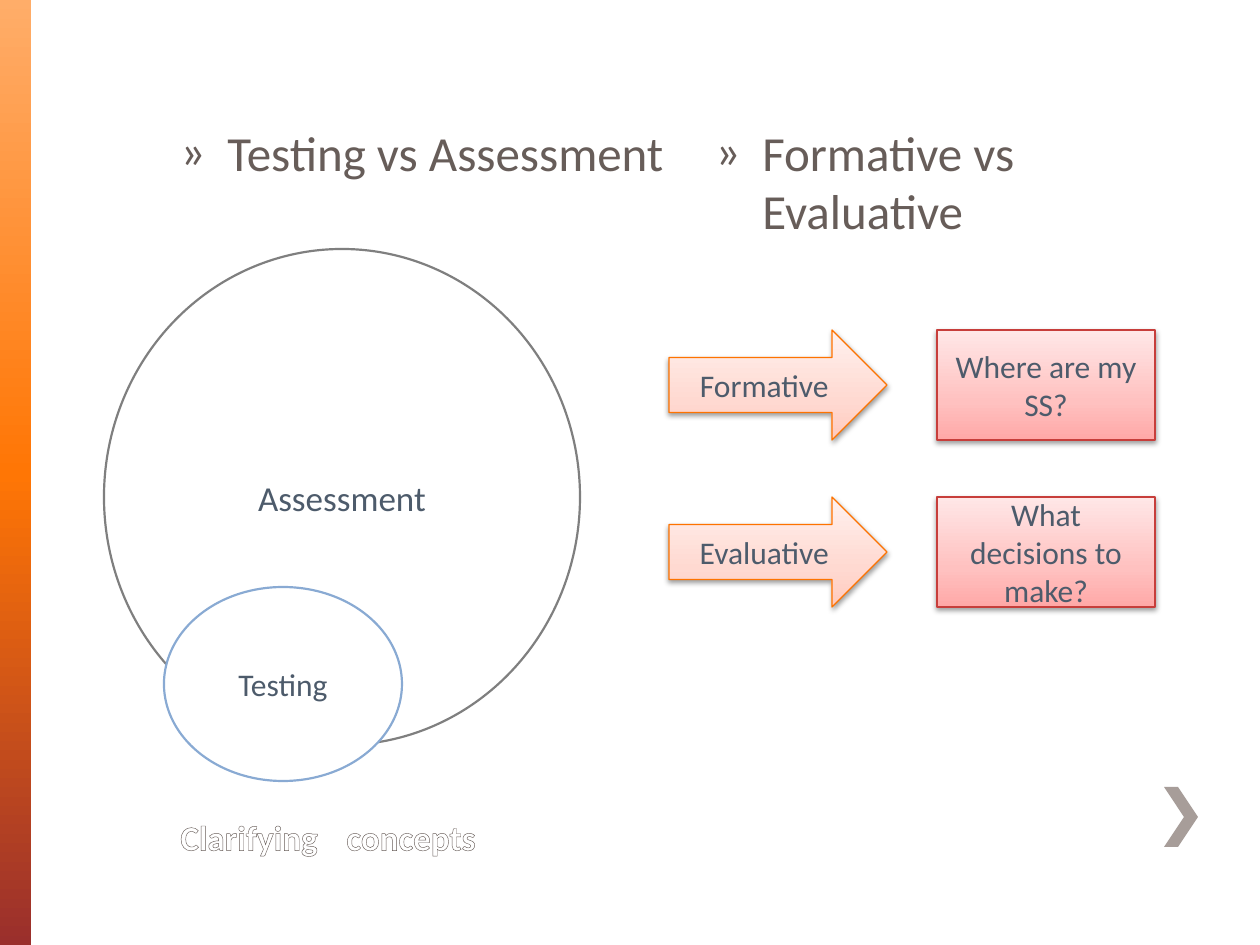
from lxml import etree
from pptx import Presentation
from pptx import util as u
from pptx.dml.color import RGBColor
from pptx.enum import shapes, text
from pptx.oxml import parse_xml
from pptx.oxml.ns import qn

NS = "http://schemas.openxmlformats.org/drawingml/2006/main"
SCALE = 914400 / 126
FONT = "Calibri"
WHITE = RGBColor(0xFF, 0xFF, 0xFF)
BROWN = RGBColor(0x67, 0x5D, 0x59)
SLATE = RGBColor(0x4D, 0x5B, 0x6B)
GRAY = RGBColor(0x7F, 0x7F, 0x7F)
BLUE = RGBColor(0x89, 0xAA, 0xD3)
ORANGE = RGBColor(0xFE, 0x73, 0x00)
RED = RGBColor(0xC7, 0x3E, 0x3B)
TAUPE = RGBColor(0xA7, 0x9D, 0x99)

# Gradients: position in percent and colour
FLAME = [(0, RGBColor(0xFF, 0xAD, 0x69)), (50, RGBColor(0xFF, 0x76, 0x05)),
         (100, RGBColor(0x9A, 0x2F, 0x2C))]
PEACH = [(0, RGBColor(0xFF, 0xCA, 0xBD)), (35, RGBColor(0xFF, 0xD9, 0xD1)),
         (100, RGBColor(0xFF, 0xF1, 0xEE))]
PINK = [(0, RGBColor(0xFF, 0xA8, 0xA7)), (35, RGBColor(0xFF, 0xC1, 0xC0)),
        (100, RGBColor(0xFF, 0xE7, 0xE7))]


def emu(px):
    return u.Emu(round(px * SCALE))


class Deck:
    def __init__(self):
        self.prs = Presentation()
        self.prs.slide_width, self.prs.slide_height = emu(1260), emu(945)
        self.page = self.prs.slides.add_slide(self.prs.slide_layouts[6])

    def style(self, run, size, color, bold=None):
        font = run.font
        font.name, font.size, font.bold = FONT, u.Pt(size), bold
        font.color.rgb = color

    def blend(self, shape, stops, angle):
        marks = "".join(f'<a:gs pos="{pos * 1000}"><a:srgbClr val="{color}"/></a:gs>'
                        for pos, color in stops)
        grad = parse_xml(f'<a:gradFill xmlns:a="{NS}" rotWithShape="1"><a:gsLst>{marks}'
                         f'</a:gsLst><a:lin ang="{angle * 60000}" scaled="0"/></a:gradFill>')
        shape.fill.background()
        props = shape.fill._xPr
        props.replace(props.find(qn("a:noFill")), grad)

    def shade(self, shape):
        glow = shape._element.spPr.find(qn("a:effectLst"))
        glow.append(parse_xml(
            f'<a:outerShdw xmlns:a="{NS}" blurRad="{u.Pt(3.1)}" dist="{u.Pt(1.6)}" '
            'dir="5400000" rotWithShape="0"><a:srgbClr val="000000">'
            '<a:alpha val="38000"/></a:srgbClr></a:outerShdw>'))

    def shape(self, kind, box, fill, line=None, width=1.25, angle=270, label="", size=18):
        item = self.page.shapes.add_shape(kind, *map(emu, box))
        item.shadow.inherit = False
        if isinstance(fill, list):
            self.blend(item, fill, angle)
        else:
            item.fill.solid()
            item.fill.fore_color.rgb = fill
        if line is None:
            item.line.fill.background()
        else:
            item.line.color.rgb, item.line.width = line, u.Pt(width)
        if label:
            frame = item.text_frame
            frame.text, frame.word_wrap = label, True
            frame.vertical_anchor = text.MSO_ANCHOR.MIDDLE
            para = frame.paragraphs[0]
            para.alignment = text.PP_ALIGN.CENTER
            self.style(para.runs[0], size, SLATE)
        return item

    def free(self, points, fill):
        pen = self.page.shapes.build_freeform(*points[0], scale=SCALE)
        pen.add_line_segments(points[1:], close=True)
        item = pen.convert_to_shape()
        item.shadow.inherit = False
        item.fill.solid()
        item.fill.fore_color.rgb = fill
        item.line.fill.background()

    def frame(self, box, anchor):
        frame = self.page.shapes.add_textbox(*map(emu, box)).text_frame
        frame.word_wrap, frame.vertical_anchor = True, anchor
        return frame

    def bullet(self, box, words):
        frame = self.frame(box, text.MSO_ANCHOR.TOP)
        frame.text = words
        para = frame.paragraphs[0]
        self.style(para.runs[0], 28, BROWN)
        props = para._p.get_or_add_pPr()
        props.set("marL", str(emu(47)))
        props.set("indent", str(-emu(47)))
        gap = etree.SubElement(props, qn("a:spcBef"))
        etree.SubElement(gap, qn("a:spcPct"), val="20000")
        etree.SubElement(props, qn("a:buFont"), typeface=FONT)
        etree.SubElement(props, qn("a:buChar"), char="»")

    def title(self, box, parts):
        para = self.frame(box, text.MSO_ANCHOR.BOTTOM).paragraphs[0]
        for words, size in parts:
            run = para.add_run()
            run.text = words
            self.style(run, size, WHITE, True)
            run.font._element.insert(0, parse_xml(
                f'<a:ln xmlns:a="{NS}" w="{u.Pt(1)}"><a:solidFill>'
                f'<a:srgbClr val="{BROWN}"/></a:solidFill></a:ln>'))


def main():
    deck = Deck()
    kinds = shapes.MSO_SHAPE

    # Side bar and corner chevron
    deck.shape(kinds.RECTANGLE, (0, 0, 31, 945), FLAME, angle=90)
    deck.free([(1178, 787), (1164, 787), (1184, 817), (1164, 847),
               (1178, 847), (1198, 817)], TAUPE)

    # Title and the two headings
    deck.title((168, 725, 998, 157), [("Clarifying", 20), (" ", 72), ("concepts", 20)])
    deck.bullet((168, 116, 514, 605), "Testing vs Assessment")
    deck.bullet((703, 116, 514, 605), "Formative vs Evaluative")

    # Testing as a part of assessment
    deck.shape(kinds.OVAL, (104, 249, 476, 496), WHITE, GRAY, label="Assessment", size=20)
    deck.shape(kinds.OVAL, (164, 587, 238, 194), WHITE, BLUE, label="Testing")

    # Each arrow leads to its question
    pairs = [("Formative", "Where are my SS?"), ("Evaluative", "What decisions to make?")]
    for row, (term, ask) in enumerate(pairs):
        top = 330 + 167 * row
        for kind, left, fill, line, label in (
                (kinds.RIGHT_ARROW, 669, PEACH, ORANGE, term),
                (kinds.RECTANGLE, 937, PINK, RED, ask)):
            deck.shade(deck.shape(kind, (left, top, 218, 110), fill, line, 0.75, label=label))

    deck.prs.save("out.pptx")


if __name__ == "__main__":
    main()
